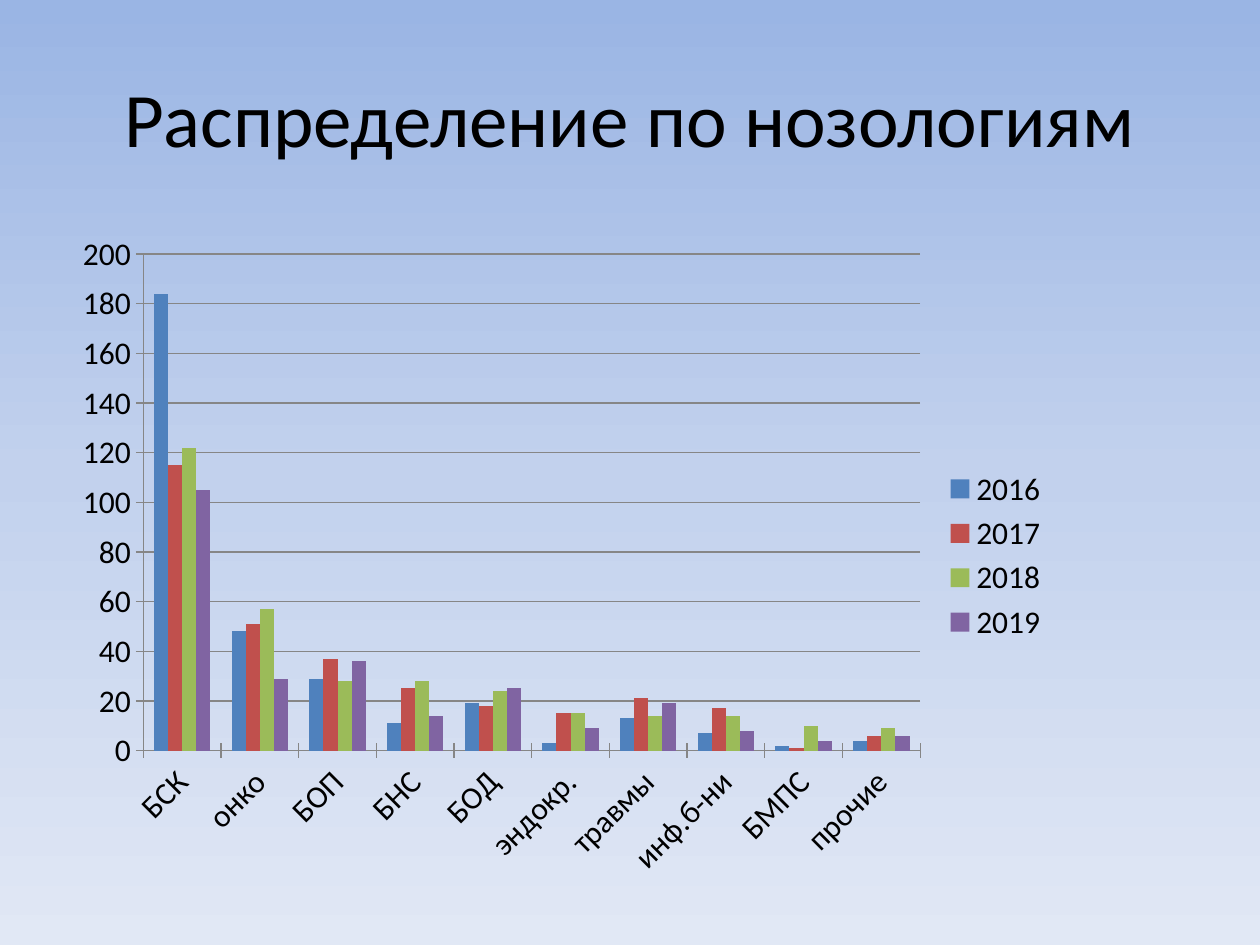
"""Build a slide with a clustered column chart of cases by disease group and year."""
from copy import deepcopy

from pptx import Presentation
from pptx import util as u
from pptx.chart.data import CategoryChartData
from pptx.dml.color import RGBColor
from pptx.enum import chart as ch, text


def rgb(value):
    return RGBColor.from_string(value)


deck = Presentation()
deck.slide_width, deck.slide_height = u.Cm(25.4), u.Cm(19.05)
slide = deck.slides.add_slide(deck.slide_layouts[5])

backdrop = slide.background.fill
backdrop.gradient()
backdrop.gradient_angle = 270
stop_list = backdrop._fill._gradFill.gsLst
stop_list.append(deepcopy(stop_list[-1]))
sky = [(0, "9AB5E4"), (0.5, "C2D1ED"), (1, "E1E8F5")]
for stop, (position, shade) in zip(backdrop.gradient_stops, sky):
    stop.position = position
    stop.color.rgb = rgb(shade)

heading = slide.shapes.title
heading.left, heading.top = u.Cm(1.27), u.Cm(0.76)
heading.width, heading.height = u.Cm(22.86), u.Cm(3.18)
heading.text_frame.text = "Распределение по нозологиям"
heading.text_frame.vertical_anchor = text.MSO_ANCHOR.MIDDLE
heading_line = heading.text_frame.paragraphs[0]
heading_line.alignment = text.PP_ALIGN.CENTER
heading_font = heading_line.runs[0].font
heading_font.name, heading_font.size = "Calibri", u.Pt(44)
heading_font.color.rgb = rgb("000000")

years = [
    ("2016", "4F81BD", [184, 48, 29, 11, 19, 3, 13, 7, 2, 4]),
    ("2017", "C0504D", [115, 51, 37, 25, 18, 15, 21, 17, 1, 6]),
    ("2018", "9BBB59", [122, 57, 28, 28, 24, 15, 14, 14, 10, 9]),
    ("2019", "8064A2", [105, 29, 36, 14, 25, 9, 19, 8, 4, 6]),
]
cases = CategoryChartData()
cases.categories = ["БСК", "онко", "БОП", "БНС", "БОД", "эндокр.",
                    "травмы", "инф.б-ни", "БМПС", "прочие"]
for year, _, counts in years:
    cases.add_series(year, counts)

chart = slide.shapes.add_chart(
    ch.XL_CHART_TYPE.COLUMN_CLUSTERED,
    u.Cm(1.27), u.Cm(4.47), u.Cm(20.12), u.Cm(13.46), cases).chart
chart.has_title = False
chart.font.name, chart.font.size = "Calibri", u.Pt(18)
chart.font.color.rgb = rgb("000000")
chart.has_legend = True
chart.legend.position = ch.XL_LEGEND_POSITION.RIGHT
chart.legend.include_in_layout = False

columns = chart.plots[0]
columns.gap_width, columns.overlap = 150, 0
columns.vary_by_categories = False
for series, (_, shade, _) in zip(columns.series, years):
    series.format.fill.solid()
    series.format.fill.fore_color.rgb = rgb(shade)

diseases, scale = chart.category_axis, chart.value_axis
scale.has_major_gridlines = True
scale.minimum_scale, scale.maximum_scale, scale.major_unit = 0, 200, 20
for axis in (diseases, scale):
    axis.major_tick_mark = ch.XL_TICK_MARK.CROSS
    axis.minor_tick_mark = ch.XL_TICK_MARK.NONE
for line in (diseases.format.line, scale.format.line, scale.major_gridlines.format.line):
    line.color.rgb = rgb("868686")
    line.width = u.Pt(0.75)
diseases.tick_labels.font.size = u.Pt(18)
diseases._element.txPr.bodyPr.set("rot", "-2700000")

deck.save("out.pptx")
